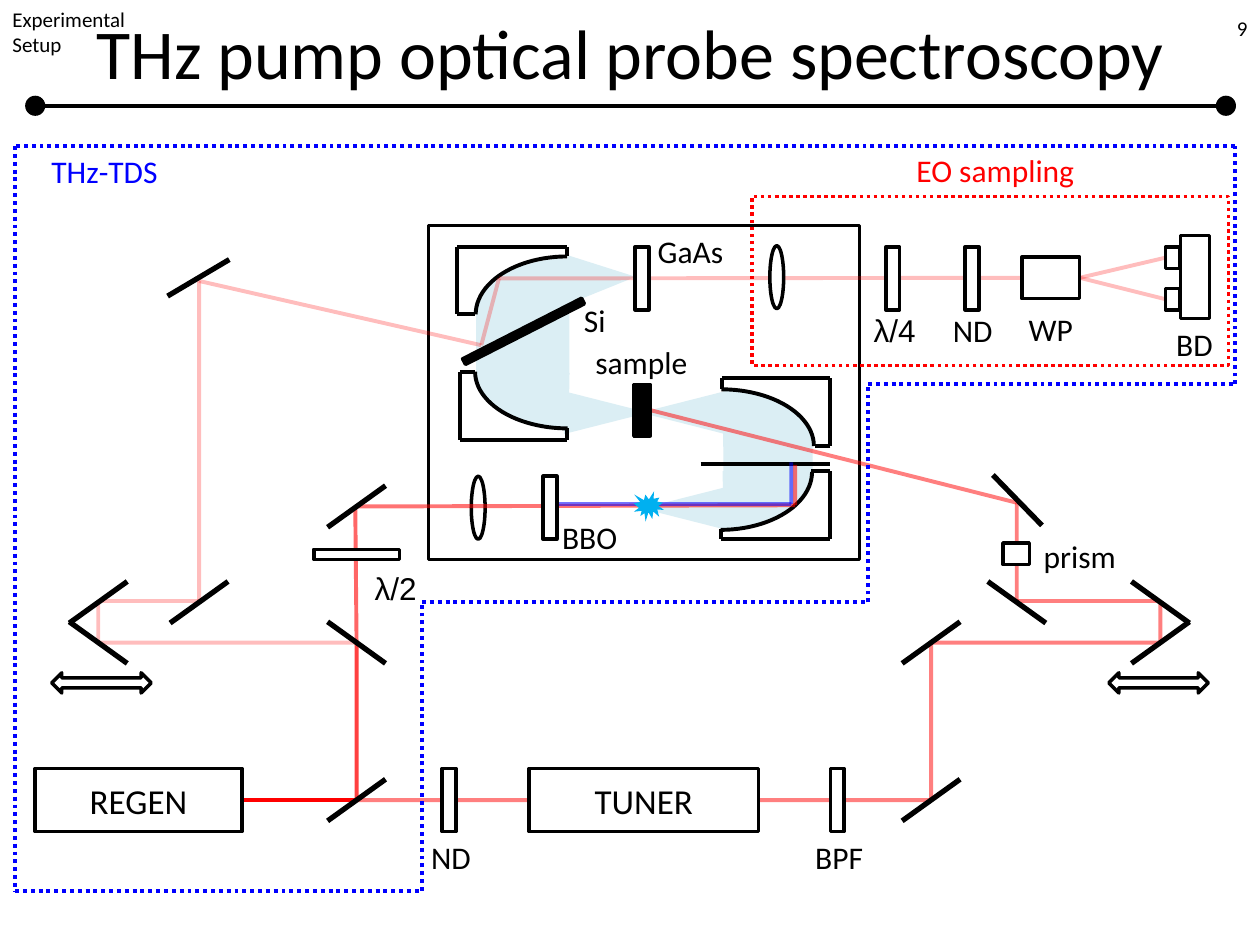
from dataclasses import dataclass
from itertools import pairwise

from lxml.etree import SubElement
from pptx import Presentation
from pptx.dml.color import RGBColor as RGB
from pptx.enum.dml import MSO_LINE_DASH_STYLE as Dash
from pptx.enum.shapes import MSO_CONNECTOR as Wire, MSO_SHAPE as Form
from pptx.enum.text import MSO_ANCHOR as Anchor, PP_ALIGN as Align
from pptx.oxml.ns import qn
from pptx.util import Inches, Pt


@dataclass(frozen=True)
class Theme:
    black: str = "000000"
    white: str = "FFFFFF"
    red: str = "FF0000"
    blue: str = "0000FF"
    pale: str = "DBEEF4"
    spark: str = "00B0F0"
    font: str = "Calibri"
    greek: str = "Arial"
    title: int = 40
    box: int = 20
    label: int = 18
    small: int = 12
    thin: float = 2
    line: float = 2.25
    thick: float = 3


T = Theme()
LEFT, RIGHT = 1, 3

# form, x, y, width, height, turn, adjustments
GLOWS = [
    (Form.ISOSCELES_TRIANGLE, 4.58, 1.95, 0.39, 0.54, 90, [0.44]),
    (Form.ISOSCELES_TRIANGLE, 5.26, 3.7, 0.34, 0.67, 270, []),
    (Form.ISOSCELES_TRIANGLE, 5.25, 2.94, 0.34, 0.67, 270, []),
    (Form.ISOSCELES_TRIANGLE, 4.64, 2.94, 0.34, 0.67, 90, []),
    (Form.RECTANGLE, 5.74, 3.45, 0.71, 0.31, 0, []),
    (Form.RECTANGLE, 3.78, 2.49, 0.74, 0.48, 0, []),
    (Form.PIE, 5.29, 2.82, 0.9, 1.45, 270, [0, 53.39]),
    (Form.PIE, 4.07, 2.21, 0.9, 1.5, 91, [0, 53.39]),
    (Form.PIE, 3.78, 2.05, 1.47, 0.9, 180, [0, 53.39]),
    (Form.PIE, 5.03, 3.29, 1.41, 0.9, 0, [0, 53.39]),
]
ARCS = [
    (4.99, 3.09, 1.47, 0.9, 0), (3.77, 2.5, 1.47, 0.9, 180),
    (4.04, 1.77, 0.92, 1.45, 270), (5.26, 3.02, 0.92, 1.45, 90),
]
MOUNTS = [
    [(5.73, 3.09), (5.73, 3), (6.59, 3), (6.59, 3.54), (6.47, 3.54)],
    [(3.77, 2.95), (3.65, 2.95), (3.65, 3.49), (4.5, 3.49), (4.5, 3.4)],
    [(4.5, 2.03), (4.5, 1.96), (3.63, 1.96), (3.63, 2.49), (3.77, 2.49)],
    [(5.72, 4.2), (5.72, 4.28), (6.59, 4.28), (6.59, 3.74), (6.44, 3.74)],
    [(5.56, 3.68), (6.59, 3.68)],
]
# name: colour, opacity in percent, points
BEAMS = {
    "source": (T.red, 100, [(1.92, 6.35), (2.83, 6.35)]),
    "split": (T.red, 75, [(2.83, 6.35), (2.83, 5.1)]),
    "rise": (T.red, 60, [(2.83, 5.1), (2.82, 4.03)]),
    "probe": (T.red, 50, [(2.83, 6.35), (7.39, 6.35), (7.39, 5.1),
                          (9.21, 5.1), (9.21, 4.77), (8.07, 4.77),
                          (8.07, 3.99), (5.16, 3.26)]),
    "gate": (T.red, 25, [(2.83, 5.1), (0.78, 5.1), (0.78, 4.77),
                         (1.58, 4.77), (1.58, 2.23), (3.82, 2.74),
                         (3.96, 2.21), (8.11, 2.21)]),
    "upper": (T.red, 25, [(8.57, 2.21), (9.25, 2.04)]),
    "lower": (T.red, 25, [(8.57, 2.21), (9.25, 2.38)]),
    "pump": (T.red, 55, [(2.83, 4.02), (6.31, 4.01), (6.31, 3.69)]),
    "double": (T.blue, 55, [(4.42, 4), (6.28, 4), (6.28, 3.67)]),
}
# mirror centres, by slope
RISING = [(2.83, 6.35), (7.39, 6.35), (7.39, 5.1), (9.21, 5.1),
          (2.83, 4.02), (1.58, 4.78), (0.78, 4.78)]
FALLING = [(2.83, 5.1), (9.21, 4.78), (8.07, 4.78), (0.78, 5.1)]
ODD = [[(1.82, 2.06), (1.33, 2.35)], [(8.27, 4.17), (7.88, 3.77)]]
PLATES = [(3.51, 6.1), (6.59, 6.1), (5.04, 1.96), (4.31, 3.78),
          (7.03, 1.96), (7.66, 1.96)]
PARTS = {
    "regen": (0.28, 6.1, 1.64, 0.5), "tuner": (4.2, 6.1, 1.82, 0.5),
    "prism": (7.96, 4.31, 0.21, 0.17), "half": (2.49, 4.36, 0.68, 0.08),
    "wp": (8.11, 2.04, 0.46, 0.33), "top": (9.25, 1.96, 0.11, 0.17),
    "low": (9.25, 2.29, 0.11, 0.17), "diode": (9.37, 1.87, 0.23, 0.66),
}
# beam, its segment, end, part, side
JOINS = [
    ("source", 0, "begin", "regen", RIGHT), ("probe", -1, "end", "sample", RIGHT),
    ("gate", -1, "end", "wp", LEFT), ("upper", 0, "begin", "wp", RIGHT),
    ("upper", 0, "end", "top", LEFT), ("lower", 0, "begin", "wp", RIGHT),
    ("lower", 0, "end", "low", LEFT),
]
ZONE = [(0.12, 1.16), (0.12, 7.07), (3.35, 7.07), (3.35, 4.78), (6.89, 4.78),
        (6.89, 3.05), (9.8, 3.05), (9.8, 1.16), (0.12, 1.16)]
# text, centre, top, format
LABELS = [
    ("λ/4", 7.1, 2.42, {"font": T.greek}), ("ND", 7.72, 2.42, {}),
    ("ND", 3.58, 6.6, {}), ("BPF", 6.66, 6.6, {}), ("prism", 8.57, 4.21, {}),
    ("λ/2", 3.14, 4.47, {"font": T.greek}), ("BBO", 4.68, 4.06, {}),
    ("GaAs", 5.48, 1.79, {}), ("WP", 8.34, 2.41, {}), ("BD", 9.48, 2.53, {}),
    ("sample", 5.09, 2.67, {}), ("Si", 4.72, 2.34, {}),
    ("EO sampling", 7.9, 1.15, {"color": T.red}),
    ("THz-TDS", 0.83, 1.16, {"color": T.blue}),
]


def write(frame, text, size, color=T.black, font=T.font, align=Align.CENTER,
          anchor=Anchor.TOP):
    frame.word_wrap, frame.vertical_anchor = True, anchor
    para = frame.paragraphs[0]
    para.alignment = align
    run = para.add_run()
    run.text = text
    for key, value in {"size": Pt(size), "name": font}.items():
        setattr(run.font, key, value)
    run.font.color.rgb = RGB.from_string(color)


def note(slide, text, box, size, **style):
    frame = slide.shapes.add_textbox(*map(Inches, box)).text_frame
    write(frame, text, size, **style)


def part(slide, form, box, fill=T.white, edge=T.black, width=T.thin, turn=0,
         adjust=()):
    """Add a preset shape; a fill or edge of None leaves it out."""
    shape = slide.shapes.add_shape(form, *map(Inches, box))
    shape.shadow.inherit = False
    shape.rotation = turn
    for i, value in enumerate(adjust):
        shape.adjustments[i] = value
    for paint, color in ((shape.fill, fill), (shape.line.fill, edge)):
        if color:
            paint.solid()
            paint.fore_color.rgb = RGB.from_string(color)
        else:
            paint.background()
    if edge:
        shape.line.width = Pt(width)
    return shape


def chain(slide, points, color=T.black, width=T.line, alpha=100, dash=None):
    """Draw straight connectors through the points and return them."""
    wires = []
    for start, stop in pairwise(points):
        wire = slide.shapes.add_connector(Wire.STRAIGHT, *map(Inches, start + stop))
        wire.line.color.rgb = RGB.from_string(color)
        for key, value in {"width": Pt(width), "dash_style": dash}.items():
            setattr(wire.line, key, value)
        props = wire._element.spPr
        if alpha < 100:
            tint = next(props.iter(qn("a:srgbClr")))
            SubElement(tint, qn("a:alpha")).set("val", str(alpha * 1000))
        SubElement(props, qn("a:effectLst"))
        wires.append(wire)
    return wires


def header(slide):
    for x in (0.2, 9.65):
        part(slide, Form.OVAL, (x, 0.76, 0.16, 0.16), T.black, None)
    chain(slide, [(0.28, 0.84), (9.72, 0.84)])
    title = slide.shapes.title
    place = {"left": 0, "top": 0, "width": 10, "height": 0.81}
    for key, value in place.items():
        setattr(title, key, Inches(value))
    write(title.text_frame, "THz pump optical probe spectroscopy", T.title,
          anchor=Anchor.MIDDLE)
    note(slide, "9", (7.6, 0, 2.4, 0.44), T.small, align=Align.RIGHT,
         anchor=Anchor.MIDDLE)
    note(slide, "Experimental Setup", (0, 0, 1.38, 0.5), T.small, align=Align.LEFT)


def mirrors(slide):
    for centres, rise in ((RISING, 0.165), (FALLING, -0.165)):
        for x, y in centres:
            chain(slide, [(x + 0.23, y - rise), (x - 0.23, y + rise)], width=T.thick)
    for ends in ODD:
        chain(slide, ends, width=T.thick)


def optics(slide):
    for form, *box, turn, adjust in GLOWS:
        part(slide, form, box, T.pale, None, turn=turn, adjust=adjust)
    part(slide, Form.RECTANGLE, (3.4, 1.79, 3.42, 2.65), None)
    for *box, turn in ARCS:
        part(slide, Form.ARC, box, None, width=T.line, turn=turn)
    for points in MOUNTS:
        chain(slide, points)
    part(slide, Form.OVAL, (3.74, 3.78, 0.11, 0.5))
    beams = {name: chain(slide, points, color, alpha=alpha)
             for name, (color, alpha, points) in BEAMS.items()}
    mirrors(slide)
    part(slide, Form.RECTANGLE, (4.13, 2.1, 0.05, 1.06), T.black, turn=63)
    part(slide, Form.OVAL, (6.11, 1.95, 0.11, 0.5))
    for x, y in PLATES:
        part(slide, Form.RECTANGLE, (x, y, 0.11, 0.5))
    parts = {name: part(slide, Form.RECTANGLE, box) for name, box in PARTS.items()}
    parts["sample"] = part(slide, Form.RECTANGLE, (5.03, 3.05, 0.13, 0.41), T.black)
    for name in ("regen", "tuner"):
        write(parts[name].text_frame, name.upper(), T.box, anchor=Anchor.MIDDLE)
    for beam, index, end, name, side in JOINS:
        wire = beams[beam][index]
        join = wire.begin_connect if end == "begin" else wire.end_connect
        join(parts[name], side)
    for x in (0.41, 8.8):
        part(slide, Form.LEFT_RIGHT_ARROW, (x, 5.34, 0.79, 0.16))
    part(slide, Form.EXPLOSION1, (5.03, 3.9, 0.24, 0.24), T.spark, None)


def zones(slide):
    frame = part(slide, Form.RECTANGLE, (5.97, 1.56, 3.78, 1.34), None, T.red)
    frame.line.dash_style = Dash.ROUND_DOT
    chain(slide, ZONE, T.blue, dash=Dash.ROUND_DOT)


def main():
    deck = Presentation()
    deck.slide_width, deck.slide_height = Inches(10), Inches(7.5)
    slide = deck.slides.add_slide(deck.slide_layouts[5])
    header(slide)
    optics(slide)
    zones(slide)
    for text, x, y, style in LABELS:
        note(slide, text, (x - 0.8, y, 1.6, 0.4), T.label, **style)
    deck.save("out.pptx")


if __name__ == "__main__":
    main()
